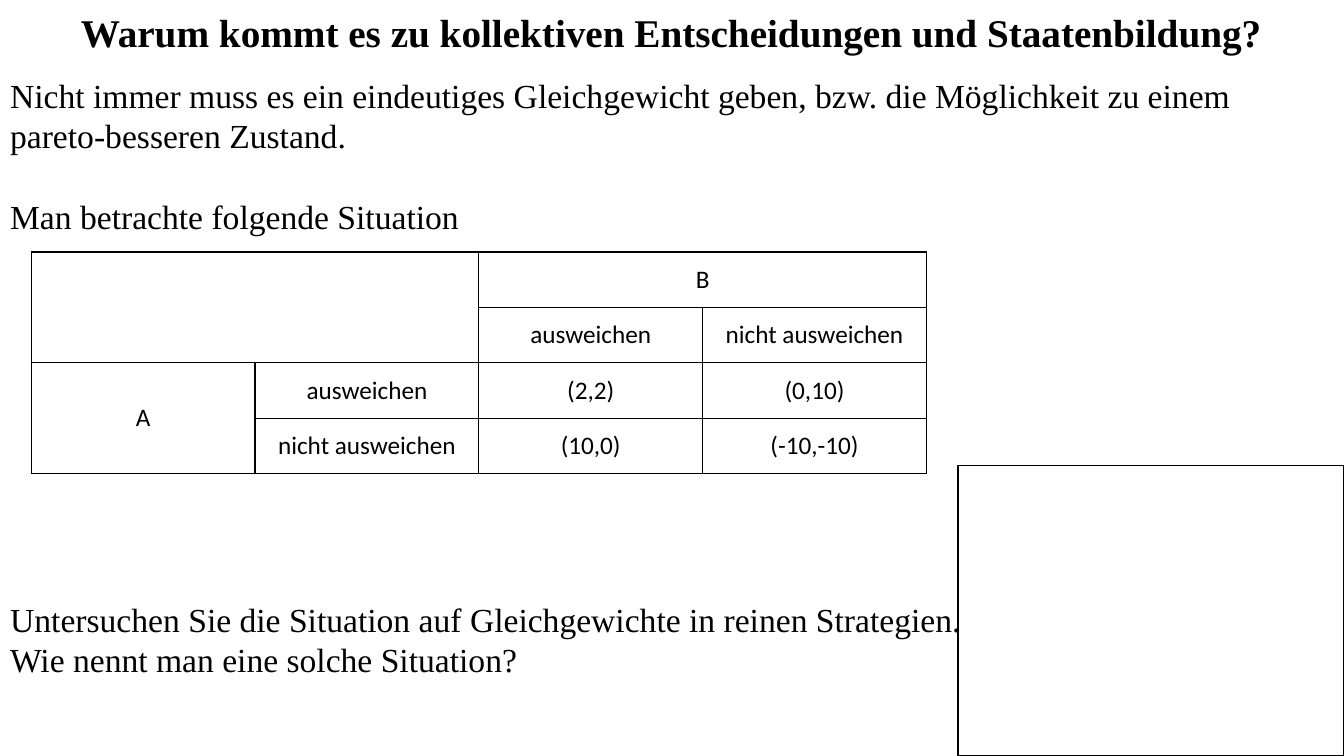
from lxml import etree
from pptx import Presentation
from pptx.dml.color import RGBColor
from pptx.enum.shapes import MSO_SHAPE
from pptx.enum.text import MSO_ANCHOR, MSO_AUTO_SIZE, PP_ALIGN
from pptx.oxml.ns import qn
from pptx.util import Inches, Pt

CENTER, LEFT = PP_ALIGN.CENTER, PP_ALIGN.LEFT
TOP, MIDDLE = MSO_ANCHOR.TOP, MSO_ANCHOR.MIDDLE
NO_AUTOFIT = MSO_AUTO_SIZE.NONE
RECTANGLE = MSO_SHAPE.RECTANGLE
BLACK = "000000"
SERIF, SANS = "Times New Roman", "Calibri"
LEADING = 1.2
BODY_SIZE = 24

TITLE = "Warum kommt es zu kollektiven Entscheidungen und Staatenbildung?"
# Each paragraph with the number of free lines below it
BODY = [
    ("Nicht immer muss es ein eindeutiges Gleichgewicht geben, bzw. "
     "die Möglichkeit zu einem pareto-besseren Zustand.", 1),
    ("Man betrachte folgende Situation", 9),
    ("Untersuchen Sie die Situation auf Gleichgewichte in reinen Strategien.", 0),
    ("Wie nennt man eine solche Situation?", 0),
]
PAYOFFS = [
    ["", "", "B", ""],
    ["", "", "ausweichen", "nicht ausweichen"],
    ["A", "ausweichen", "(2,2)", "(0,10)"],
    ["", "nicht ausweichen", "(10,0)", "(-10,-10)"],
]
MERGES = [((0, 0), (1, 1)), ((0, 2), (0, 3)), ((2, 0), (3, 0))]


def color(value):
    return RGBColor.from_string(value)


def add_span(para, text, font, size, bold=False):
    span = para.add_run()
    span.text = text
    span.font.name = font
    span.font.size = Pt(size)
    span.font.bold = bold
    span.font.color.rgb = color(BLACK)


def place(shape, box):
    shape.left, shape.top, shape.width, shape.height = map(Inches, box)


def prepare_frame(shape):
    frame = shape.text_frame
    frame.word_wrap = True
    frame.auto_size = NO_AUTOFIT
    frame.vertical_anchor = TOP
    return frame


def set_spacing(para, size, free_lines=0):
    para.line_spacing = Pt(size * LEADING)
    para.space_before = Pt(0)
    para.space_after = Pt(size * LEADING * free_lines)


def fill_title(page, box):
    title = page.shapes.title
    place(title, box)
    para = prepare_frame(title).paragraphs[0]
    para.alignment = CENTER
    set_spacing(para, 28)
    add_span(para, TITLE, SERIF, 28, bold=True)


def fill_body(page, box):
    body = page.placeholders[1]
    place(body, box)
    frame = prepare_frame(body)
    for index, (text, free_lines) in enumerate(BODY):
        para = frame.add_paragraph() if index else frame.paragraphs[0]
        para.alignment = LEFT
        set_spacing(para, BODY_SIZE, free_lines)
        # Plain paragraph without bullet or indent
        properties = para._p.get_or_add_pPr()
        properties.set("marL", "0")
        properties.set("indent", "0")
        etree.SubElement(properties, qn("a:buNone"))
        add_span(para, text, SERIF, BODY_SIZE)


def style_cell(cell):
    properties = cell._tc.get_or_add_tcPr()
    for side in ("lnL", "lnR", "lnT", "lnB"):
        border = etree.SubElement(properties, qn(f"a:{side}"), w=str(Pt(1)))
        fill = etree.SubElement(border, qn("a:solidFill"))
        etree.SubElement(fill, qn("a:srgbClr"), val=BLACK)
    cell.fill.background()
    cell.vertical_anchor = MIDDLE


def add_payoff_table(page, box):
    left, top, width, height = map(Inches, box)
    rows, columns = len(PAYOFFS), len(PAYOFFS[0])
    table = page.shapes.add_table(rows, columns, left, top, width, height).table
    table.first_row = False
    table.horz_banding = False
    for row, texts in enumerate(PAYOFFS):
        for column, text in enumerate(texts):
            cell = table.cell(row, column)
            style_cell(cell)
            if text:
                para = cell.text_frame.paragraphs[0]
                para.alignment = CENTER
                add_span(para, text, SANS, 18)
    for first, last in MERGES:
        table.cell(*first).merge(table.cell(*last))


def add_empty_frame(page, box):
    frame = page.shapes.add_shape(RECTANGLE, *map(Inches, box))
    frame.shadow.inherit = False
    frame.fill.background()
    frame.line.color.rgb = color(BLACK)
    frame.line.width = Pt(1)


def main():
    deck = Presentation()
    deck.slide_width, deck.slide_height = Inches(13.33), Inches(7.5)
    page = deck.slides.add_slide(deck.slide_layouts[1])
    page.background.fill.solid()
    page.background.fill.fore_color.rgb = color("FFFFFF")
    fill_title(page, (0, 0.03, 13.31, 0.59))
    fill_body(page, (0, 0.69, 13.31, 6.62))
    add_payoff_table(page, (0.31, 2.5, 8.88, 2.2))
    add_empty_frame(page, (9.5, 4.62, 3.83, 2.88))
    deck.save("out.pptx")


if __name__ == "__main__":
    main()
